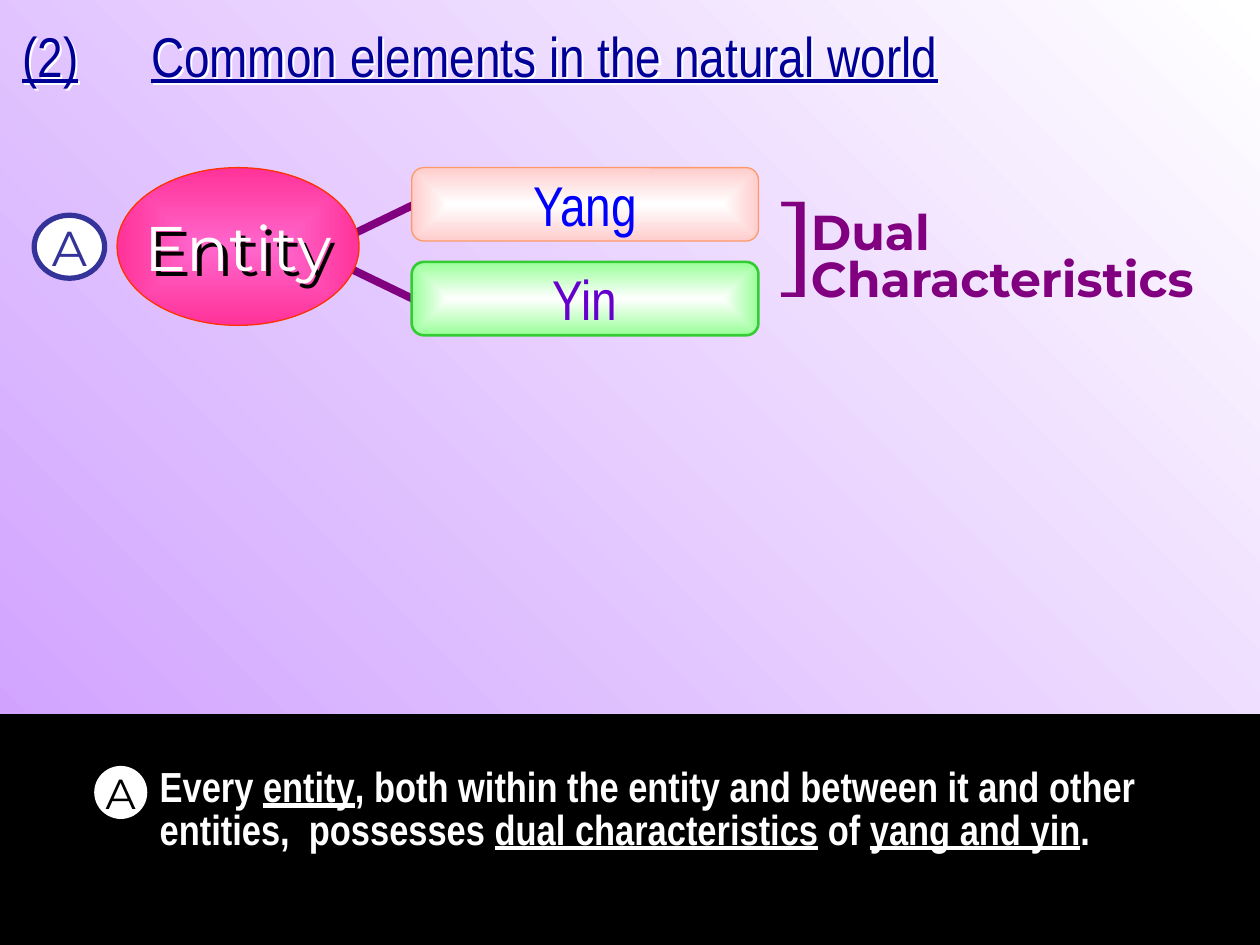
from lxml.etree import SubElement
from pptx import Presentation
from pptx.dml.color import RGBColor
from pptx.enum.shapes import MSO_CONNECTOR, MSO_SHAPE
from pptx.enum.text import MSO_ANCHOR, MSO_AUTO_SIZE, PP_ALIGN
from pptx.oxml.ns import qn
from pptx.util import Cm, Pt

color = RGBColor.from_string


def add_shape(kind, box, fill=None, outline=None, width=0.75):
    shape = slide.shapes.add_shape(kind, *map(Cm, box))
    shape.shadow.inherit = False
    if isinstance(fill, tuple):
        shape.fill.gradient()
        for stop, value in zip(shape.fill.gradient_stops, fill):
            stop.color.rgb = color(value)
        gradient = shape._element.spPr.find(qn("a:gradFill"))
        gradient.remove(gradient.find(qn("a:lin")))
        center = SubElement(gradient, qn("a:path"), path="shape")
        SubElement(center, qn("a:fillToRect"), l="50000", t="50000", r="50000", b="50000")
    elif fill:
        shape.fill.solid()
        shape.fill.fore_color.rgb = color(fill)
    else:
        shape.fill.background()
    if outline:
        shape.line.color.rgb = color(outline)
        shape.line.width = Pt(width)
    else:
        shape.line.fill.background()
    return shape


def write(shape, lines, font, size, ink, bold=False, align=PP_ALIGN.CENTER,
          spacing=None, wrap=False, anchor=MSO_ANCHOR.MIDDLE):
    frame = shape.text_frame
    frame.word_wrap = wrap
    frame.vertical_anchor = anchor
    frame.text = "\n".join(lines)
    for paragraph in frame.paragraphs:
        paragraph.alignment = align
        paragraph.line_spacing = spacing
        paragraph.font.name = font
        paragraph.font.size = Pt(size)
        paragraph.font.bold = bold
        paragraph.font.color.rgb = color(ink)


presentation = Presentation()
presentation.slide_width = Cm(25.4)
presentation.slide_height = Cm(19.05)
slide = presentation.slides.add_slide(presentation.slide_layouts[6])

background = slide.background.fill
background.gradient()
background.gradient_angle = 45
for stop, value in zip(background.gradient_stops, ("CC99FF", "FFFFFF")):
    stop.color.rgb = color(value)

for start_y, end_y in ((5.38, 6.25), (4.78, 3.91)):
    connector = slide.shapes.add_connector(
        MSO_CONNECTOR.STRAIGHT, Cm(6.99), Cm(start_y), Cm(8.79), Cm(end_y))
    connector.line.color.rgb = color("800080")
    connector.line.width = Pt(4.5)
    SubElement(connector._element.spPr, qn("a:effectLst"))

for name, top, tint, outline, width, ink in (
    ("Yin", 5.28, "99FF99", "33CC33", 1.5, "6600CC"),
    ("Yang", 3.38, "FFCCCC", "FF9966", 0.75, "0000FF"),
):
    bar = add_shape(MSO_SHAPE.ROUNDED_RECTANGLE, (8.3, top, 6.99, 1.48),
                    ("FFFFFF", tint), outline, width)
    write(bar, [name], "Arial Narrow", 32, ink)

add_shape(MSO_SHAPE.RECTANGLE, (0, 14.4, 25.4, 4.65), "000000", "000000")

dual = add_shape(MSO_SHAPE.ROUNDED_RECTANGLE, (15.93, 3.5, 9.1, 3.48))
write(dual, ["Dual", "Characteristics"], "Montserrat", 28, "800080", True,
      PP_ALIGN.LEFT, 0.8)

for box, outline, size, ink in (
    ((1.9, 15.44, 1.07, 1.07), None, 24, "000000"),
    ((0.69, 4.34, 1.42, 1.27), "333399", 28, "333399"),
):
    badge = add_shape(MSO_SHAPE.OVAL, box, "FFFFFF", outline, 3)
    write(badge, ["A"], "Montserrat", size, ink)

statement = slide.shapes.add_textbox(Cm(2.97), Cm(15.37), Cm(20.52), Cm(1.98))
write(statement, [""], "Arial Narrow", 24, "FFFFFF", True, PP_ALIGN.LEFT, 0.85,
      True, MSO_ANCHOR.TOP)
statement.text_frame.auto_size = MSO_AUTO_SIZE.SHAPE_TO_FIT_TEXT
for text, underline in (
    ("Every ", False),
    ("entity", True),
    (", both within the entity and between it and other entities,  possesses ", False),
    ("dual characteristics", True),
    (" of ", False),
    ("yang and yin", True),
    (".", False),
):
    run = statement.text_frame.paragraphs[0].add_run()
    run.text = text
    run.font.underline = underline

entity_box = (2.36, 3.38, 4.88, 3.18)
add_shape(MSO_SHAPE.OVAL, entity_box, ("FF66CC", "FF3399"), "FF3300")
entity = add_shape(MSO_SHAPE.OVAL, entity_box)
write(entity, ["Entity"], "Montserrat", 36, "FFFFFF")

bracket = slide.shapes.add_textbox(Cm(15.34), Cm(4.01), Cm(0.53), Cm(2.11))
write(bracket, ["]"], "TeX Gyre Pagella", 54, "800080", True, spacing=0.75,
      anchor=MSO_ANCHOR.TOP)

shadowed = [(entity, "000000", Cm(0.14))]
for text, left, width, align in (
    ("Common elements in the natural world", 1.57, 18.82, PP_ALIGN.CENTER),
    ("(2)", 0.2, 1.96, PP_ALIGN.LEFT),
):
    heading = slide.shapes.add_textbox(Cm(left), Cm(0.3), Cm(width), Cm(1.6))
    write(heading, [text], "Arial Narrow", 32, "000099", align=align,
          anchor=MSO_ANCHOR.TOP)
    heading.text_frame.auto_size = MSO_AUTO_SIZE.SHAPE_TO_FIT_TEXT
    heading.text_frame.paragraphs[0].font.underline = True
    heading.shadow.inherit = False
    shadowed.append((heading, "FFFFFF", Cm(0.06)))

for shape, value, distance in shadowed:
    effects = shape._element.spPr.find(qn("a:effectLst"))
    shadow = SubElement(effects, qn("a:outerShdw"), dist=str(distance), dir="2700000")
    SubElement(shadow, qn("a:srgbClr"), val=value)

presentation.save("out.pptx")
